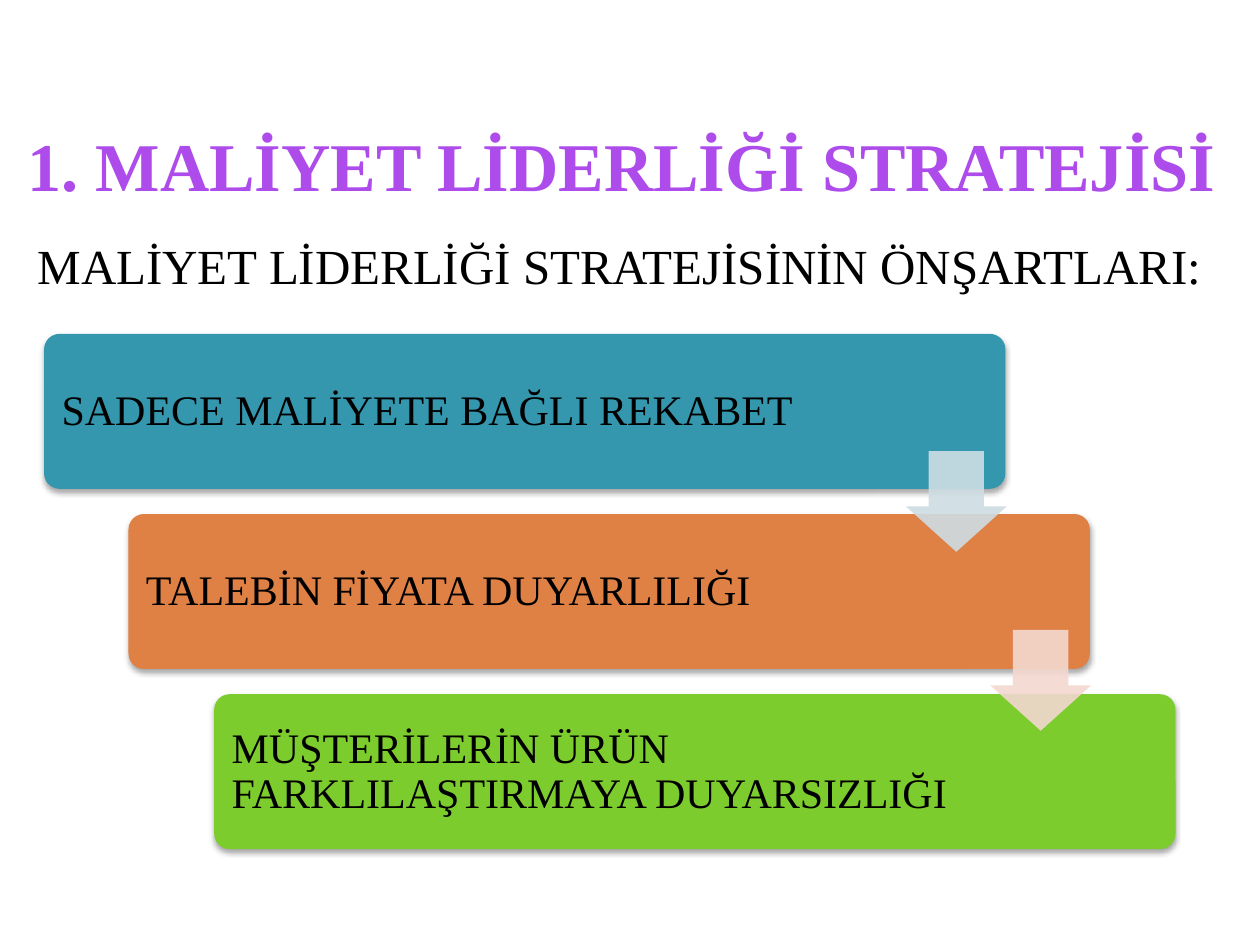
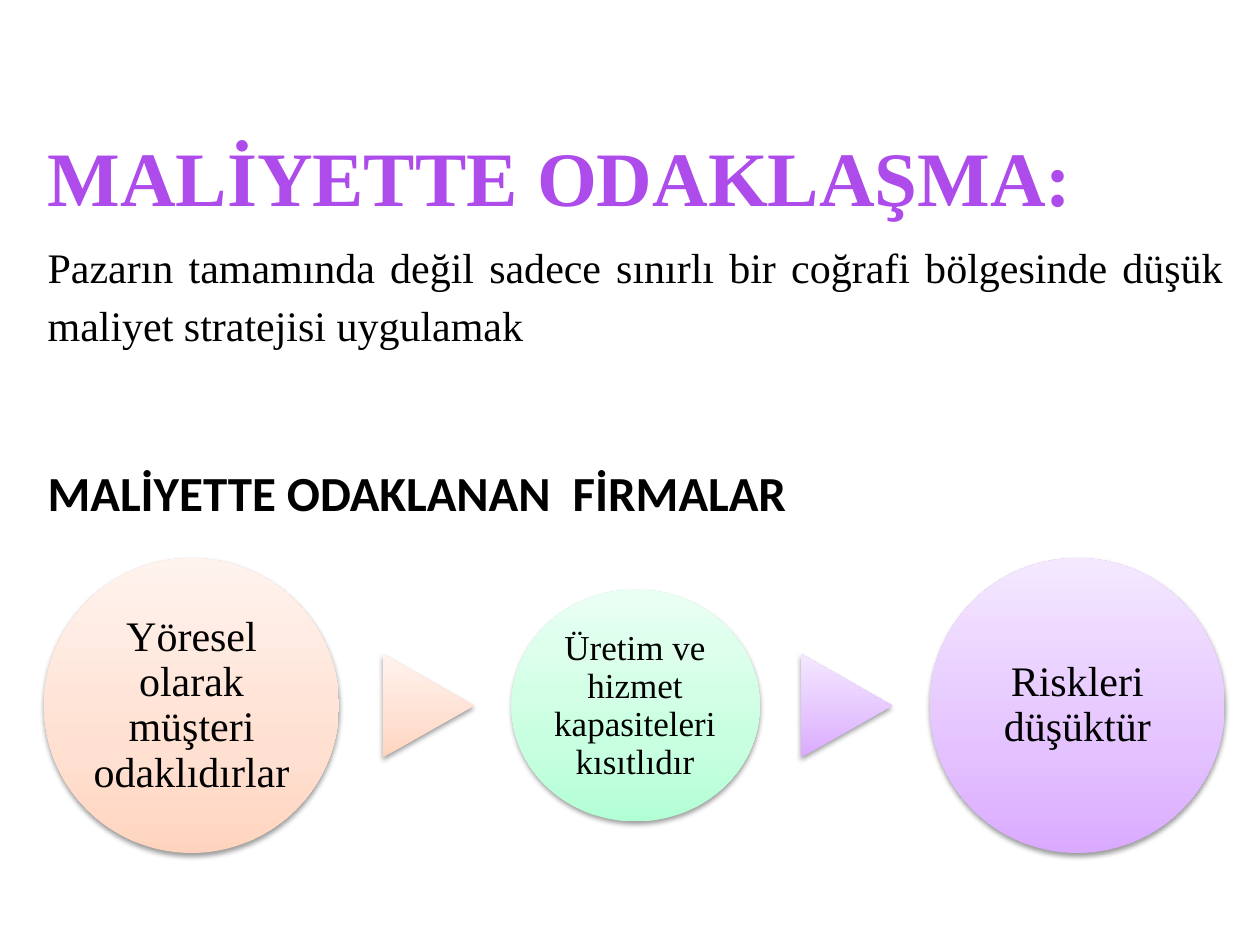
from lxml import etree
from pptx import Presentation
from pptx.dml.color import RGBColor as RGB
from pptx.enum.shapes import MSO_SHAPE as SHAPE
from pptx.enum.text import MSO_ANCHOR as ANCHOR, PP_ALIGN as ALIGN
from pptx.oxml import parse_xml
from pptx.oxml.ns import nsdecls, qn
from pptx.util import Pt

PX = 9144  # 100 px to the inch

BLACK = RGB(0, 0, 0)
VIOLET = RGB(0xAE, 0x4C, 0xEB)
TEAL = RGB(0x34, 0x97, 0xAE)
ORANGE = RGB(0xDF, 0x80, 0x45)
GREEN = RGB(0x7D, 0xCC, 0x2E)
MIST = RGB(0xCE, 0xDD, 0xE3)
BLUSH = RGB(0xF3, 0xD8, 0xCF)

# Gradients run from the bottom up
PEACH = [RGB(0xFF, 0xD4, 0xBE), RGB(0xFF, 0xE0, 0xD1), RGB(0xFF, 0xF3, 0xEE)]
MINT = [RGB(0xB2, 0xFF, 0xD5), RGB(0xC9, 0xFF, 0xE1), RGB(0xEA, 0xFF, 0xF3)]
LILAC = [RGB(0xDA, 0xAA, 0xFF), RGB(0xE4, 0xC2, 0xFF), RGB(0xF4, 0xE8, 0xFF)]
STOPS = [0, 35, 100]

# Text formats shared by both slides
BODY = {"name": "Times New Roman", "size": Pt(24), "bold": False}
TITLE = BODY | {"size": Pt(39), "bold": True}
LEAD = BODY | {"size": Pt(28)}
HEAD = {"name": "Calibri", "size": Pt(28), "bold": True}


def add_text(slide, box, paras, pad=(10, 5), anchor=ANCHOR.TOP):
    """Each paragraph is (words, font, colour, paragraph format)."""
    frame = slide.shapes.add_textbox(*[n * PX for n in box]).text_frame
    form = {"word_wrap": True, "vertical_anchor": anchor,
            "margin_left": pad[0] * PX, "margin_right": pad[0] * PX,
            "margin_top": pad[1] * PX, "margin_bottom": pad[1] * PX}
    for key, val in form.items():
        setattr(frame, key, val)
    for i, (words, font, color, style) in enumerate(paras):
        para = frame.add_paragraph() if i else frame.paragraphs[0]
        run = para.add_run()
        run.text = words
        run.font.color.rgb = color
        for item, vals in ((run.font, font), (para, style)):
            for key, val in vals.items():
                setattr(item, key, val)


def add_form(slide, kind, box, fill, adj=(), alpha=100, shade=0):
    form = slide.shapes.add_shape(kind, *[n * PX for n in box])
    form.shadow.inherit = False
    form.line.fill.background()
    for i, val in enumerate(adj):
        form.adjustments[i] = val
    props = form._element.spPr
    if isinstance(fill, list):
        stops = "".join(
            f'<a:gs pos="{pos * 1000}"><a:srgbClr val="{color}"/></a:gs>'
            for pos, color in zip(STOPS, fill))
        grad = parse_xml(
            f'<a:gradFill {nsdecls("a")} rotWithShape="0"><a:gsLst>{stops}'
            '</a:gsLst><a:lin ang="16200000" scaled="0"/></a:gradFill>')
        props.find(qn("a:prstGeom")).addnext(grad)
    else:
        form.fill.solid()
        form.fill.fore_color.rgb = fill
        if alpha < 100:
            tint = props.find(qn("a:solidFill"))[0]
            etree.SubElement(tint, qn("a:alpha"), val=str(alpha * 1000))
    if shade:
        props.find(qn("a:effectLst")).append(parse_xml(
            f'<a:outerShdw {nsdecls("a")} blurRad="{Pt(3.1)}" '
            f'dist="{Pt(1.7)}" dir="5400000" rotWithShape="0">'
            f'<a:srgbClr val="{BLACK}"><a:alpha val="{shade * 1000}"/>'
            '</a:srgbClr></a:outerShdw>'))
    return form


deck = Presentation()
deck.slide_width, deck.slide_height = 1000 * PX, 750 * PX
blank = deck.slide_layouts[6]
TIGHT = {"line_spacing": 0.9}
LOOSE = {"line_spacing": 1.15, "alignment": ALIGN.JUSTIFY}

# Slide 1: conditions of cost leadership
slide = deck.slides.add_slide(blank)
add_text(slide, (12, 100, 980, 63), [
    ("1. MALİYET LİDERLİĞİ STRATEJİSİ", TITLE, VIOLET, TIGHT)])
add_text(slide, (20, 187, 953, 55), [
    ("MALİYET LİDERLİĞİ STRATEJİSİNİN ÖNŞARTLARI:", LEAD, BLACK,
     TIGHT | {"alignment": ALIGN.JUSTIFY})])

# Staircase of steps
steps = [
    ("SADECE MALİYETE BAĞLI REKABET", TEAL),
    ("TALEBİN FİYATA DUYARLILIĞI", ORANGE),
    ("MÜŞTERİLERİN ÜRÜN FARKLILAŞTIRMAYA DUYARSIZLIĞI", GREEN),
]
for i, (words, color) in enumerate(steps):
    left, top = 35 + i * 135 // 2, 265 + i * 143
    add_form(slide, SHAPE.ROUNDED_RECTANGLE, (left, top, 763, 123), color,
             adj=[0.1], shade=35)
    add_text(slide, (left + 4, top + 4, 631, 116),
             [(words, BODY, BLACK, TIGHT)], (10, 10), ANCHOR.MIDDLE)

# Arrows from step to step
for i, color in enumerate([MIST, BLUSH]):
    add_form(slide, SHAPE.DOWN_ARROW, (719 + i * 67, 358 + i * 142, 80, 80),
             color, adj=[0.55, 0.45], alpha=90)

# Slide 2: cost focus
slide = deck.slides.add_slide(blank)
add_text(slide, (28, 87, 841, 92), [
    ("MALİYETTE ODAKLAŞMA:", TITLE | {"size": Pt(44)}, VIOLET, LOOSE)])
add_text(slide, (28, 181, 953, 181), [
    ("Pazarın tamamında değil sadece sınırlı bir coğrafi bölgesinde "
     "düşük maliyet stratejisi uygulamak", BODY, BLACK, LOOSE),
    ("MALİYETTE ODAKLANAN  FİRMALAR", HEAD, BLACK,
     TIGHT | {"space_before": Pt(68)})])

# Circles on one centre line
MID = 560
firms = [
    ("Yöresel olarak müşteri odaklıdırlar", 152, 234, 234, 24, PEACH),
    ("Üretim ve hizmet kapasiteleri kısıtlıdır", 504, 197, 184, 20, MINT),
    ("Riskleri düşüktür", 855, 234, 234, 24, LILAC),
]
for words, mid, wide, high, size, fill in firms:
    add_form(slide, SHAPE.OVAL,
             (mid - wide // 2, MID - high // 2, wide, high), fill, shade=38)
    wide, high = round(wide * 0.71), round(high * 0.71)
    add_text(slide, (mid - wide // 2, MID - high // 2, wide, high),
             [(words, BODY | {"size": Pt(size)}, BLACK,
               TIGHT | {"alignment": ALIGN.CENTER})], (3, 3), ANCHOR.MIDDLE)

# Pointers between the circles
for left, fill in [(299, PEACH), (631, LILAC)]:
    form = add_form(slide, SHAPE.ISOSCELES_TRIANGLE,
                    (left, MID - 36, 82, 72), fill, shade=38)
    form.rotation = 90

deck.save("out.pptx")
